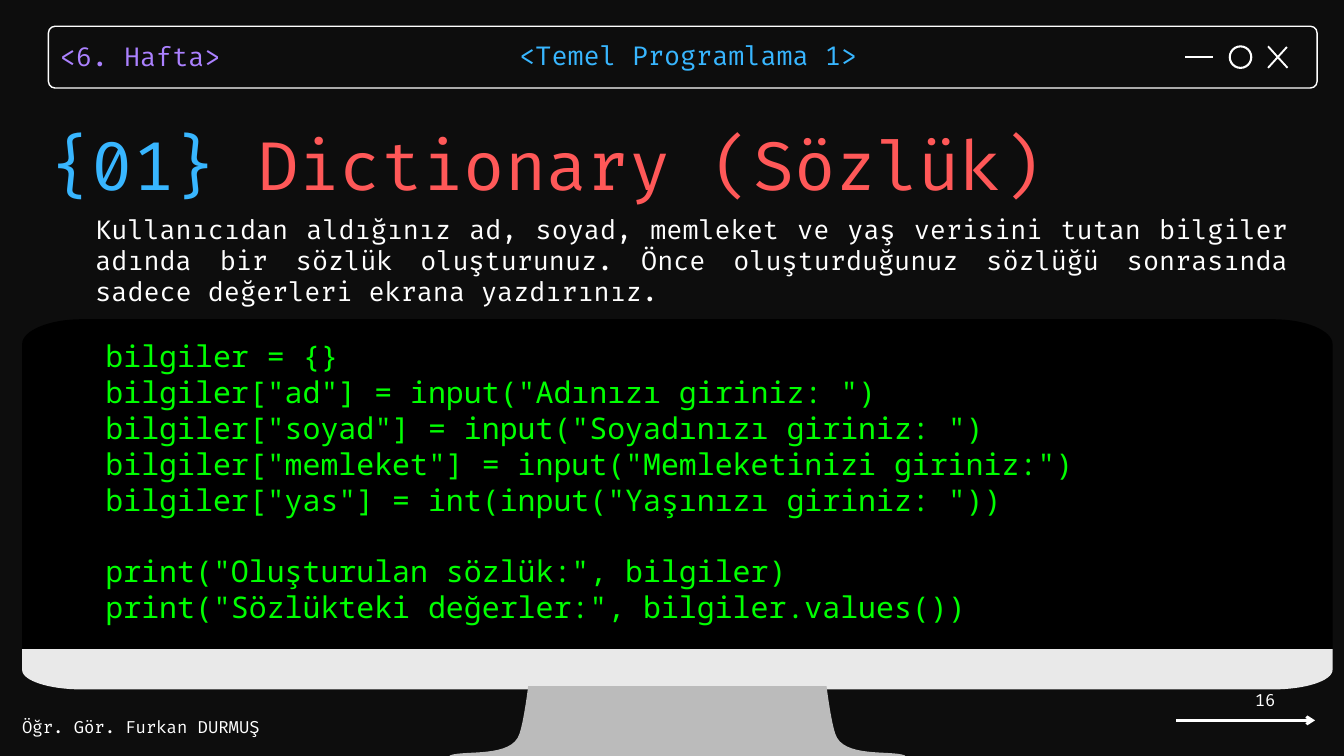
import pptx
import pptx.util
import pptx.dml.color
import pptx.enum.shapes
import pptx.enum.text
import pptx.oxml.ns
import lxml.etree

Inches, Pt = pptx.util.Inches, pptx.util.Pt
RGBColor = pptx.dml.color.RGBColor
SHAPES = pptx.enum.shapes.MSO_SHAPE
ALIGN = pptx.enum.text.PP_ALIGN
ANCHOR = pptx.enum.text.MSO_ANCHOR

NIGHT = RGBColor(0x0D, 0x0D, 0x0D)
WHITE = RGBColor(0xFF, 0xFF, 0xFF)
BLACK = RGBColor(0x00, 0x00, 0x00)
PURPLE = RGBColor(0xAB, 0x81, 0xFF)
BLUE = RGBColor(0x38, 0xB6, 0xFF)
RED = RGBColor(0xFF, 0x58, 0x58)
GREEN = RGBColor(0x00, 0xFF, 0x00)
LIGHT_GREY = RGBColor(0xE9, 0xE9, 0xE9)
GREY = RGBColor(0xBB, 0xBB, 0xBB)

SANS, MONO = "Fira Code", "Noto Sans Mono"
CENTRE = 10.08
CURVE_STEPS = 16
CODE_LINE = Pt(38.4)

CODE = [
    'bilgiler = {}',
    'bilgiler["ad"] = input("Adınızı giriniz: ")',
    'bilgiler["soyad"] = input("Soyadınızı giriniz: ")',
    'bilgiler["memleket"] = input("Memleketinizi giriniz:")',
    'bilgiler["yas"] = int(input("Yaşınızı giriniz: "))',
    '',
    'print("Oluşturulan sözlük:", bilgiler)',
    'print("Sözlükteki değerler:", bilgiler.values())',
]
TASK = ("Kullanıcıdan aldığınız ad, soyad, memleket ve yaş verisini tutan bilgiler "
        "adında bir sözlük oluşturunuz. Önce oluşturduğunuz sözlüğü sonrasında "
        "sadece değerleri ekrana yazdırınız.")

HEADER_FORMAT = {"line_spacing": Pt(39.2)}
LABELS = [
    ((0.89, 0.52, 3.4, 0.53), 28, [("<6. Hafta>", PURPLE)], HEADER_FORMAT),
    ((7.73, 0.51, 5.29, 0.53), 28, [("<Temel Programlama 1>", BLUE)], HEADER_FORMAT),
    ((0.33, 10.67, 3.67, 0.3), 18, [("Öğr. Gör. Furkan DURMUŞ", WHITE)], {}),
    ((1.42, 3.17, 17.73, 1.41), 28, [(TASK, WHITE)], {"alignment": ALIGN.JUSTIFY}),
    ((16.85, 10.26, 2.13, 0.3), 18, [("16", WHITE)], {"alignment": ALIGN.RIGHT}),
    ((0.75, 1.61, 19.25, 1.41), 72, [("{01} ", BLUE), ("Dictionary (Sözlük)", RED)],
     {"line_spacing": Pt(102.6)}),
]

WINDOW_LINES = [
    ((18.87, 0.69), (19.16, 1.01)),
    ((19.15, 0.7), (18.87, 1.01)),
    ((17.64, 0.85), (18.05, 0.85)),
]

MONITOR_LEFT_HALVES = [
    (BLACK, (CENTRE, 4.75), [
        [(1.22, 4.75)],
        [(0.73, 4.75), (0.33, 4.92), (0.33, 5.12)],
        [(0.33, 9.66)]]),
    (LIGHT_GREY, (0.33, 9.66), [
        [(0.33, 9.97)],
        [(0.33, 10.13), (0.73, 10.26), (1.22, 10.26)]]),
    (GREY, (7.86, 10.21), [
        [(7.86, 10.21), (7.8, 10.71), (7.73, 10.92)],
        [(7.62, 11.28), (6.91, 11.16), (6.7, 11.24)],
        [(6.68, 11.25), (6.69, 11.27), (6.72, 11.27)]]),
]


def set_all(target, values):
    for name, value in values.items():
        setattr(target, name, value)


def trace(start, segments):
    points = [start]
    for segment in segments:
        if len(segment) == 1:
            points += segment
            continue
        corners = [points[-1], *segment]
        for step in range(1, CURVE_STEPS + 1):
            t = step / CURVE_STEPS
            weights = ((1 - t) ** 3, 3 * t * (1 - t) ** 2, 3 * t ** 2 * (1 - t), t ** 3)
            points.append(tuple(sum(w * corner[axis] for w, corner in zip(weights, corners))
                                for axis in (0, 1)))
    return points


def style(shape, fill=None, line=None, width=0):
    shape.shadow.inherit = False
    if fill is None:
        shape.fill.background()
    else:
        shape.fill.solid()
        shape.fill.fore_color.rgb = fill
    if line is None:
        shape.line.fill.background()
    else:
        shape.line.color.rgb = line
        shape.line.width = Pt(width)


def add_preset(slide, kind, box, **look):
    shape = slide.shapes.add_shape(kind, *map(Inches, box))
    style(shape, **look)
    return shape


def add_mirrored(slide, fill, start, segments):
    left = trace(start, segments)
    right = [(2 * CENTRE - x, y) for x, y in reversed(left)]
    outline = [(Inches(x), Inches(y)) for x, y in left + right]
    builder = slide.shapes.build_freeform(*outline[0])
    builder.add_line_segments(outline[1:], close=True)
    style(builder.convert_to_shape(), fill=fill)


def add_line(slide, start, end, width, arrow=False):
    line = slide.shapes.add_connector(pptx.enum.shapes.MSO_CONNECTOR.STRAIGHT,
                                      *map(Inches, start + end))
    line.line.color.rgb = WHITE
    line.line.width = Pt(width)
    qn = pptx.oxml.ns.qn
    if arrow:
        lxml.etree.SubElement(line.line._get_or_add_ln(), qn("a:tailEnd"), type="arrow")
    lxml.etree.SubElement(line._element.spPr, qn("a:effectLst"))


def add_frame(slide, box):
    frame = slide.shapes.add_textbox(*map(Inches, box)).text_frame
    set_all(frame, {"word_wrap": True, "vertical_anchor": ANCHOR.TOP,
                    "margin_left": 0, "margin_top": 0,
                    "margin_right": 0, "margin_bottom": 0})
    return frame


def add_run(paragraph, text, font, size, color):
    run = paragraph.add_run()
    run.text = text
    set_all(run.font, {"name": font, "size": Pt(size)})
    run.font.color.rgb = color


def add_label(slide, box, size, pieces, layout):
    paragraph = add_frame(slide, box).paragraphs[0]
    set_all(paragraph, layout)
    for text, color in pieces:
        add_run(paragraph, text, SANS, size, color)


def add_code(slide, box):
    frame = add_frame(slide, box)
    for number, text in enumerate(CODE):
        if not text:
            continue
        paragraph = frame.add_paragraph() if number else frame.paragraphs[0]
        if number and not CODE[number - 1]:
            paragraph.space_before = CODE_LINE
        add_run(paragraph, text, MONO, 32, GREEN)


def main():
    deck = pptx.Presentation()
    set_all(deck, {"slide_width": Inches(20), "slide_height": Inches(11.25)})
    slide = deck.slides.add_slide(deck.slide_layouts[6])
    slide.background.fill.solid()
    slide.background.fill.fore_color.rgb = NIGHT

    add_line(slide, (17.5, 10.72), (19.57, 10.72), 3, arrow=True)
    title_bar = add_preset(slide, SHAPES.ROUNDED_RECTANGLE, (0.72, 0.39, 18.88, 0.92),
                           line=WHITE, width=1.5)
    title_bar.adjustments[0] = 0.11
    for start, end in WINDOW_LINES:
        add_line(slide, start, end, 2)
    add_preset(slide, SHAPES.OVAL, (18.3, 0.69, 0.32, 0.32), line=WHITE, width=2.25)

    for label in LABELS:
        add_label(slide, *label)
    for part in MONITOR_LEFT_HALVES:
        add_mirrored(slide, *part)
    add_preset(slide, SHAPES.RECTANGLE, (1.17, 5.04, 17.92, 4.37),
               fill=BLACK, line=BLACK, width=2)
    add_code(slide, (1.57, 5.03, 17.06, 4.31))
    deck.save("out.pptx")


if __name__ == "__main__":
    main()
